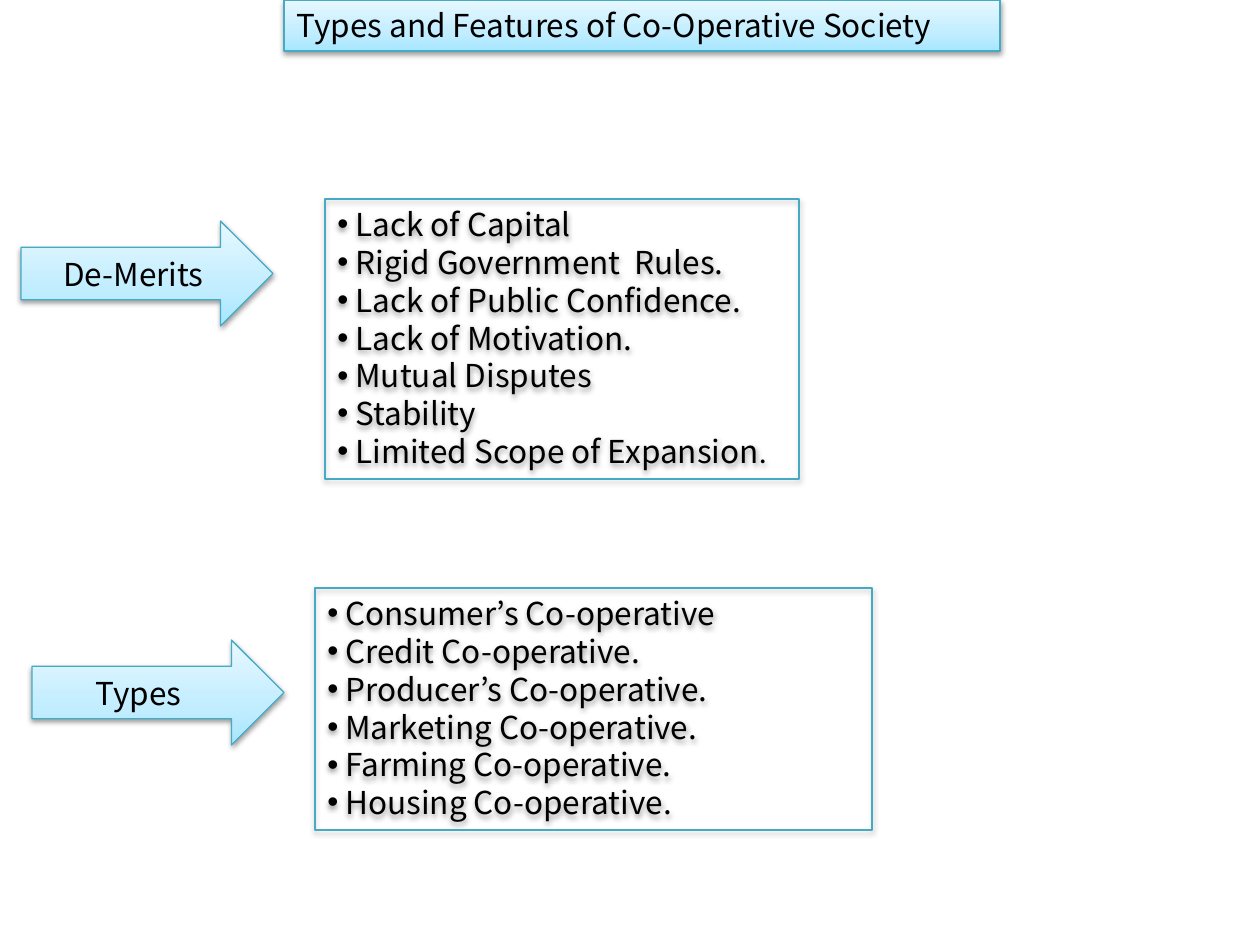
from lxml import etree
from pptx import Presentation
from pptx.dml.color import RGBColor
from pptx.enum.shapes import MSO_SHAPE
from pptx.enum.text import MSO_ANCHOR, MSO_AUTO_SIZE, PP_ALIGN
from pptx.oxml.ns import qn
from pptx.util import Emu, Pt

RIGHT_ARROW = MSO_SHAPE.RIGHT_ARROW
TOP, MIDDLE = MSO_ANCHOR.TOP, MSO_ANCHOR.MIDDLE
LEFT, CENTER = PP_ALIGN.LEFT, PP_ALIGN.CENTER
NO_AUTOFIT = MSO_AUTO_SIZE.NONE

PX_PER_INCH = 126
FONT = "Noto Sans CJK KR"
END_FONT = "Calibri"
TEXT_SIZE = 18
BULLET_INDENT = 18
COLORS = {
    "text": "000000",
    "line": "46AAC5",
    "shadow": "000000",
    "deep": "A7E6FF",
    "mid": "C1EDFF",
    "pale": "E7F8FF",
}
GRADIENT_STOPS = [(0, "deep"), (35, "mid"), (100, "pale")]

DEMERITS = [
    ["Lack of Capital"],
    ["Rigid Government  Rules."],
    ["Lack of Public Confidence."],
    ["Lack of Motivation."],
    ["Mutual Disputes"],
    ["Stability"],
    ["Limited Scope of Expansion", (".", END_FONT)],
]
TYPES = [
    ["Consumer’s Co-operative"],
    ["Credit Co-operative."],
    ["Producer’s Co-operative."],
    ["Marketing Co-operative."],
    ["Farming Co-operative."],
    ["Housing Co-operative."],
]


def px(length):
    return Emu(round(length * 914400 / PX_PER_INCH))


def rgb(name):
    return RGBColor.from_string(COLORS[name])


def add_color(parent, name):
    return etree.SubElement(parent, qn("a:srgbClr"), val=COLORS[name])


def fill_gradient(shape):
    """Fill from the deep colour at the bottom to the pale one at the top."""
    gradient = etree.SubElement(shape._element.spPr, qn("a:gradFill"), rotWithShape="1")
    stops = etree.SubElement(gradient, qn("a:gsLst"))
    for percent, name in GRADIENT_STOPS:
        add_color(etree.SubElement(stops, qn("a:gs"), pos=str(percent * 1000)), name)
    etree.SubElement(gradient, qn("a:lin"), ang=str(270 * 60000), scaled="1")


def outline_with_shadow(shape):
    shape.line.color.rgb = rgb("line")
    shape.line.width = Pt(0.75)
    shape.shadow.inherit = False
    effects = shape._element.spPr.find(qn("a:effectLst"))
    shadow = etree.SubElement(
        effects, qn("a:outerShdw"), blurRad="40000", dist="20000",
        dir=str(90 * 60000), rotWithShape="0")
    etree.SubElement(add_color(shadow, "shadow"), qn("a:alpha"), val="38000")


def set_frame(shape, anchor):
    frame = shape.text_frame
    frame.word_wrap = True
    frame.auto_size = NO_AUTOFIT
    frame.vertical_anchor = anchor
    return frame


def add_run(paragraph, text, font_name=FONT):
    run = paragraph.add_run()
    run.text = text
    run.font.name = font_name
    run.font.size = Pt(TEXT_SIZE)
    run.font.color.rgb = rgb("text")


def add_bullet(paragraph):
    properties = paragraph._p.get_or_add_pPr()
    properties.set("marL", str(px(BULLET_INDENT)))
    properties.set("indent", str(-px(BULLET_INDENT)))
    etree.SubElement(properties, qn("a:buFont"), typeface="Arial")
    etree.SubElement(properties, qn("a:buChar"), char="•")


def place_title(slide, text, left, top, width, height):
    title = slide.shapes.title
    title.left, title.top, title.width, title.height = map(px, (left, top, width, height))
    fill_gradient(title)
    outline_with_shadow(title)
    paragraph = set_frame(title, TOP).paragraphs[0]
    paragraph.alignment = LEFT
    add_run(paragraph, text)


def add_arrow(slide, text, left, top, right_inset=13):
    arrow = slide.shapes.add_shape(RIGHT_ARROW, px(left), px(top), px(252), px(105))
    fill_gradient(arrow)
    outline_with_shadow(arrow)
    frame = set_frame(arrow, MIDDLE)
    frame.margin_right = px(right_inset)
    paragraph = frame.paragraphs[0]
    paragraph.alignment = CENTER
    add_run(paragraph, text)


def add_list_box(slide, items, left, top, width, height):
    """Each item is a list of runs: plain text, or a (text, font name) pair."""
    box = slide.shapes.add_textbox(px(left), px(top), px(width), px(height))
    outline_with_shadow(box)
    frame = set_frame(box, TOP)
    for index, runs in enumerate(items):
        paragraph = frame.add_paragraph() if index else frame.paragraphs[0]
        add_bullet(paragraph)
        for run in runs:
            add_run(paragraph, *([run] if isinstance(run, str) else run))


def main():
    presentation = Presentation()
    presentation.slide_width = px(1260)
    presentation.slide_height = px(945)
    slide = presentation.slides.add_slide(presentation.slide_layouts[5])
    place_title(slide, "Types and Features of Co-Operative Society", 284, 0, 716, 51)
    add_arrow(slide, "Types", 32, 640, right_inset=25)
    add_list_box(slide, TYPES, 315, 588, 557, 242)
    add_arrow(slide, "De-Merits", 21, 221)
    add_list_box(slide, DEMERITS, 325, 199, 474, 280)
    presentation.save("out.pptx")


if __name__ == "__main__":
    main()
